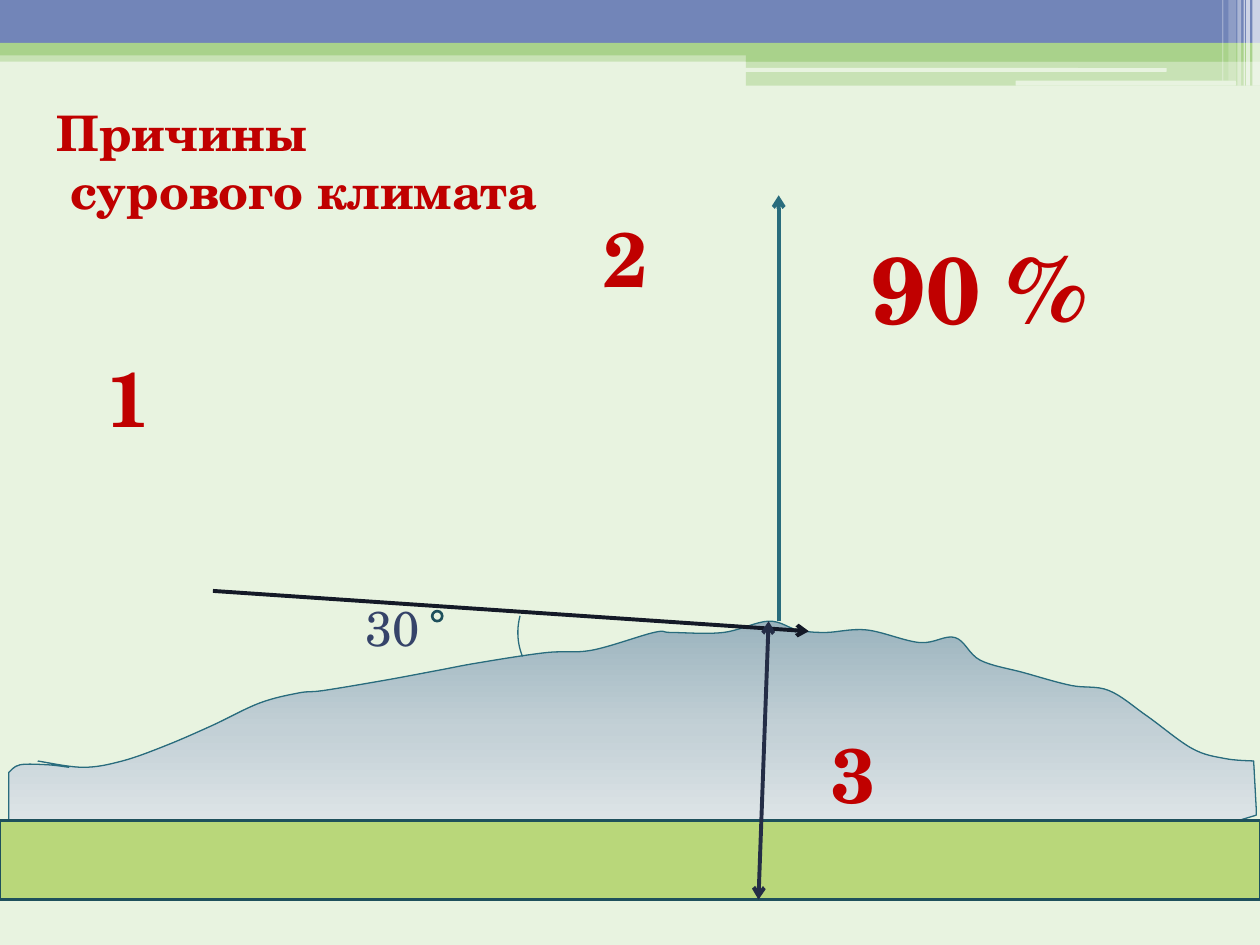
from copy import deepcopy

from lxml.etree import SubElement
from pptx import Presentation
from pptx.dml.color import RGBColor
from pptx.enum.shapes import MSO_CONNECTOR, MSO_SHAPE as SHAPE
from pptx.enum.text import MSO_ANCHOR, MSO_AUTO_SIZE as AUTOSIZE, PP_ALIGN
from pptx.oxml.ns import qn
from pptx.util import Cm, Pt

THEME = {
    "font": "TeX Gyre Schola",
    "paper": "E8F3E0", "blue": "7285B8", "green": "A9D28B", "white": "FFFFFF",
    "red": "C00000", "angle": "354369", "teal": "296C7D", "dark teal": "1E505C",
    "ground": "B9D77A", "ray": "141927", "depth": "242D46",
    "ice": ("9BB4BE", "C3D0D6", "E2E8EA"),
    "title size": 28, "number size": 44, "share size": 54,
    "thin": 0.75, "outline": 1.5, "arrow": 2.25,
}

# All places below are in inches: left, top, width, height.
# Header bands: preset, place, colour, opacity in percent
HEADER = [
    (SHAPE.RECTANGLE, (0, 0.4, 10, 0.09), "green", 50),
    (SHAPE.RECTANGLE, (0, 0, 10, 0.34), "blue", 100),
    (SHAPE.RECTANGLE, (0, 0.34, 10, 0.1), "green", 100),
    (SHAPE.RECTANGLE, (5.92, 0.39, 4.08, 0.1), "green", 100),
    (SHAPE.RECTANGLE, (5.92, 0.48, 4.08, 0.2), "green", 50),
    (SHAPE.ROUNDED_RECTANGLE, (5.91, 0.54, 3.35, 0.03), "paper", 100),
    (SHAPE.ROUNDED_RECTANGLE, (8.06, 0.64, 1.75, 0.04), "paper", 100),
]
# Light stripes at the right end of the header: left, width, height, opacity
STRIPES = [
    (9.94, 0.06, 0.68, 65), (9.89, 0.03, 0.68, 65), (9.87, 0.01, 0.68, 60),
    (9.82, 0.03, 0.68, 40), (9.75, 0.06, 0.64, 20), (9.7, 0.01, 0.64, 30),
]

TITLE = ["Причины", "сурового климата"]
TITLE_PLACE = (0.35, 0.76, 4.06, 1.04)
# Text, place, size, colour, bold, alignment, wrap
LABELS = [
    ("30", (2.8, 4.69, 0.87, 0.57), "title size", "angle", False, PP_ALIGN.LEFT, True),
    ("90 %", (6.73, 1.78, 2.08, 1.01), "share size", "red", True, PP_ALIGN.CENTER, False),
    ("1", (0.75, 2.73, 0.5, 0.84), "number size", "red", True, PP_ALIGN.LEFT, False),
    ("3", (6.5, 5.72, 0.59, 0.84), "number size", "red", True, PP_ALIGN.LEFT, False),
    ("2", (4.69, 1.62, 0.59, 0.84), "number size", "red", True, PP_ALIGN.LEFT, False),
]

ICE_RIDGE = [
    (0.3, 6.04), (0.66, 6.09), (0.97, 6.04), (1.31, 5.92), (1.68, 5.76),
    (2.06, 5.58), (2.37, 5.5), (2.57, 5.48), (3.05, 5.4), (3.48, 5.32),
    (3.8, 5.26), (4.33, 5.18), (4.7, 5.16), (5.19, 5.02), (5.33, 5.02),
    (5.74, 5.02), (6.1, 4.93), (6.33, 5), (6.55, 5.02), (6.88, 5),
    (7.3, 5.1), (7.58, 5.06), (7.78, 5.24), (8.13, 5.34), (8.5, 5.44),
    (8.8, 5.48), (9.1, 5.68), (9.46, 5.94), (9.72, 6.02), (9.95, 6.04),
]
ICE_BASE = [(9.97, 6.41), (9.97, 6.47), (9.77, 6.53), (8.59, 6.51),
            (0.66, 6.65), (0.07, 6.65)]
ICE_LEFT_EDGE = [(0.07, 6.13), (0.16, 6.07), (0.38, 6.07), (0.55, 6.09)]

GROUND = (0, 6.51, 10, 0.63)
ANGLE_ARC = (4.11, 4.51, 1.02, 1.02)
ARC_TURN, ARC_ENDS = 229.1, (173.34, 195.65)
DEGREE_SIGN = (3.43, 4.85, 0.08, 0.08)
# Start, end, colour, arrowheads
SUN_RAY = ((1.69, 4.69), (6.42, 5.01), "ray", ["tailEnd"])
REFLECTION = ((6.18, 4.93), (6.18, 1.55), "teal", ["tailEnd"])
ICE_DEPTH = ((6.1, 4.93), (6.02, 7.14), "depth", ["headEnd", "tailEnd"])


def inches(*values):
    return [Cm(value * 2.54) for value in values]


def rgb(name):
    return RGBColor.from_string(THEME[name])


def smooth(vertices):
    """Turn the straight segments between the vertices into Bézier curves."""
    places = [(int(v.get("x")), int(v.get("y"))) for v in vertices]
    padded = [places[0], *places, places[-1]]
    for end, a, b, c, d in zip(vertices[1:], padded, padded[1:], padded[2:], padded[3:]):
        segment = end.getparent()
        segment.tag = qn("a:cubicBezTo")
        for near, before, after in ((b, a, c), (c, d, b)):
            x, y = (round(n + (q - p) / 6) for n, p, q in zip(near, before, after))
            control = deepcopy(end)
            control.set("x", str(x))
            control.set("y", str(y))
            end.addprevious(control)


def style(shape, fill=None, line=None, width="thin"):
    shape.shadow.inherit = False
    if fill:
        shape.fill.solid()
        shape.fill.fore_color.rgb = rgb(fill)
    else:
        shape.fill.background()
    if line:
        shape.line.color.rgb = rgb(line)
        shape.line.width = Pt(THEME[width])
    else:
        shape.line.fill.background()


def add_band(slide, preset, place, color, opacity):
    band = slide.shapes.add_shape(preset, *inches(*place))
    style(band, color)
    if opacity < 100:
        fill = band.fill._xPr.find(qn("a:solidFill"))
        SubElement(fill[0], qn("a:alpha"), val=str(opacity * 1000))


def add_ice(slide):
    points = [inches(*point) for point in ICE_RIDGE + ICE_BASE + ICE_LEFT_EDGE]
    builder = slide.shapes.build_freeform(*points[0])
    builder.add_line_segments(points[1:], close=False)
    ice = builder.convert_to_shape()
    vertices = list(ice._element.iter(qn("a:pt")))
    smooth(vertices[:len(ICE_RIDGE)])
    smooth(vertices[-len(ICE_LEFT_EDGE):])

    style(ice, line="teal")
    ice.fill.gradient()
    ice.fill.gradient_angle = 270
    first = ice.fill._xPr.find(qn("a:gradFill")).find(qn("a:gsLst"))[0]
    first.addnext(deepcopy(first))
    for stop, color, position in zip(ice.fill.gradient_stops, THEME["ice"], (0, 0.5, 1)):
        stop.color.rgb = RGBColor.from_string(color)
        stop.position = position


def add_arrow(slide, start, end, color, heads):
    arrow = slide.shapes.add_connector(MSO_CONNECTOR.STRAIGHT, *inches(*start, *end))
    arrow.line.color.rgb = rgb(color)
    arrow.line.width = Pt(THEME["arrow"])
    for head in heads:
        SubElement(arrow.line._ln, qn("a:" + head), type="arrow")
    SubElement(arrow.line._ln.getparent(), qn("a:effectLst"))


def write(frame, lines, size, color, bold, align, wrap):
    frame.text = "\n".join(lines)
    frame.word_wrap = wrap
    frame.auto_size = AUTOSIZE.SHAPE_TO_FIT_TEXT
    frame.vertical_anchor = MSO_ANCHOR.TOP
    for paragraph in frame.paragraphs:
        paragraph.alignment = align
        for run in paragraph.runs:
            run.font.name = THEME["font"]
            run.font.size = Pt(THEME[size])
            run.font.bold = bold
            run.font.color.rgb = rgb(color)


def add_title(slide):
    title = slide.shapes.title
    title.left, title.top, title.width, title.height = inches(*TITLE_PLACE)
    write(title.text_frame, TITLE, "title size", "red", True, PP_ALIGN.LEFT, False)
    second_line = title.text_frame.paragraphs[1]
    second_line._p.get_or_add_pPr().set("marL", str(Cm(0.27)))


def main():
    deck = Presentation()
    deck.slide_width, deck.slide_height = Cm(25.4), Cm(19.05)
    slide = deck.slides.add_slide(deck.slide_layouts[5])
    slide.background.fill.solid()
    slide.background.fill.fore_color.rgb = rgb("paper")

    for band in HEADER:
        add_band(slide, *band)
    for left, width, height, opacity in STRIPES:
        add_band(slide, SHAPE.RECTANGLE, (left, 0, width, height), "white", opacity)
    add_title(slide)

    add_ice(slide)
    ground = slide.shapes.add_shape(SHAPE.RECTANGLE, *inches(*GROUND))
    style(ground, "ground", "dark teal", "outline")
    add_arrow(slide, *SUN_RAY)
    arc = slide.shapes.add_shape(SHAPE.ARC, *inches(*ANGLE_ARC))
    style(arc, line="teal")
    arc.rotation = ARC_TURN
    for index, end in enumerate(ARC_ENDS):
        arc.adjustments[index] = end
    degree_sign = slide.shapes.add_shape(SHAPE.OVAL, *inches(*DEGREE_SIGN))
    style(degree_sign, "paper", "dark teal", "outline")
    add_arrow(slide, *REFLECTION)
    for text, place, *look in LABELS:
        label = slide.shapes.add_textbox(*inches(*place))
        write(label.text_frame, [text], *look)
    add_arrow(slide, *ICE_DEPTH)
    deck.save("out.pptx")


if __name__ == "__main__":
    main()
